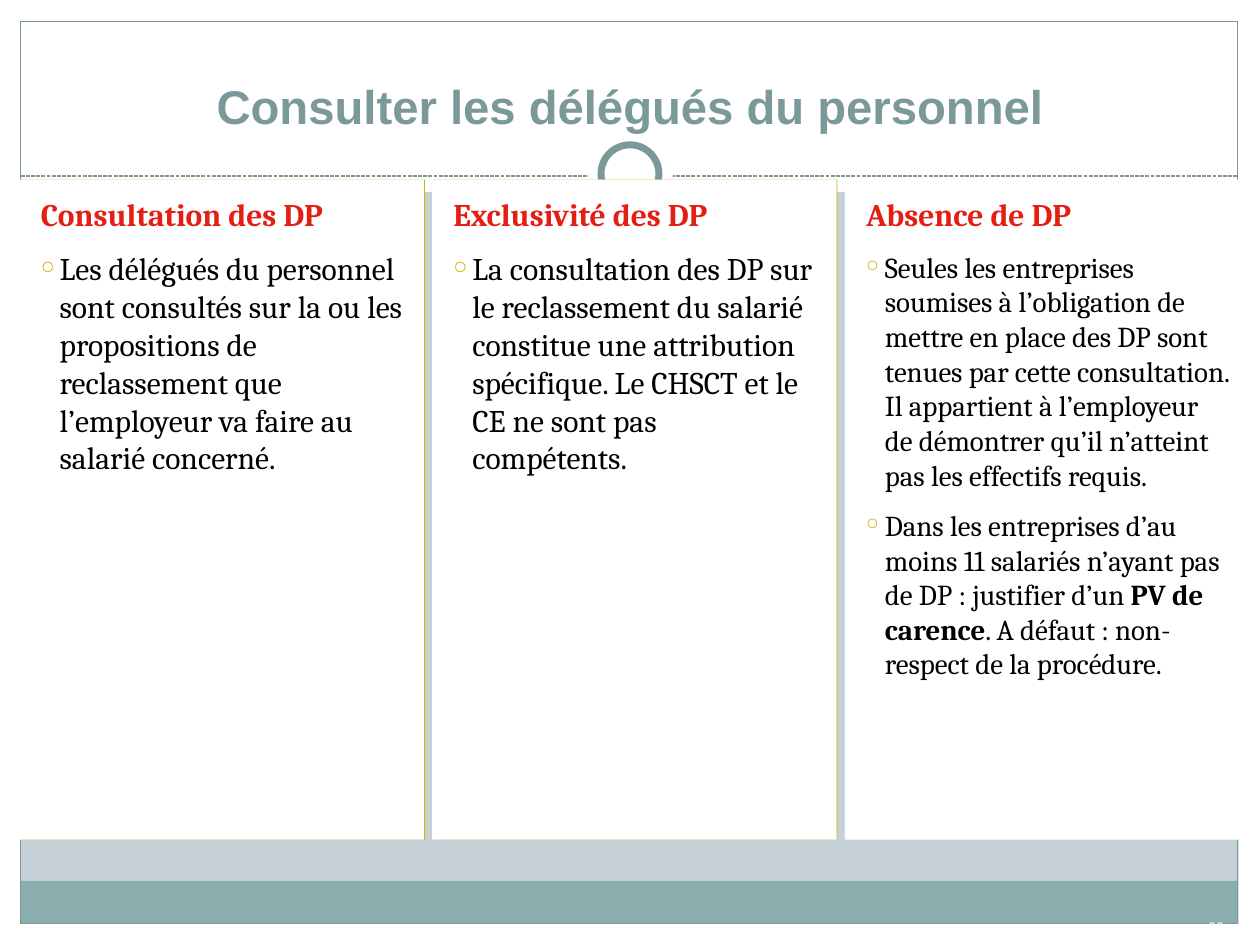
from dataclasses import dataclass
from typing import NamedTuple

from lxml.etree import SubElement
from pptx import Presentation
from pptx.dml.color import RGBColor
from pptx.enum.dml import MSO_LINE
from pptx.enum.shapes import MSO_CONNECTOR, MSO_SHAPE
from pptx.enum.text import MSO_ANCHOR, PP_ALIGN
from pptx.oxml.ns import qn
from pptx.util import Emu, Inches, Pt

SLIDE_W, SLIDE_H = Inches(10), Inches(7.5)
WHITE, BLACK, SAGE, MIST, TEAL = "FFFFFF", "000000", "7C999A", "C5D1D7", "8CADAE"
RED, GOLD = "E41E13", "CCB400"
COLUMN_LEFT, COLUMN_PITCH = 1.55, 32.75


class Box(NamedTuple):
    """Left, top, width and height in percent of the slide's size."""
    left: float
    top: float
    width: float
    height: float

    def emu(self) -> list[Emu]:
        sides = (SLIDE_W, SLIDE_H, SLIDE_W, SLIDE_H)
        return [Emu(round(side * share / 100)) for side, share in zip(sides, self)]


class Span(NamedTuple):
    text: str
    bold: bool = False


@dataclass
class Column:
    heading: str
    points: list[list[Span]]
    size: float = 18
    width: float = 32.1
    right_inset: float = 0.16
    edge: bool = True


COLUMNS = [
    Column("Consultation des DP", [[Span(
        "Les délégués du personnel sont consultés sur la ou les propositions de "
        "reclassement que l’employeur va faire au salarié concerné.")]]),
    Column("Exclusivité des DP", [[Span(
        "La consultation des DP sur le reclassement du salarié constitue une attribution "
        "spécifique. Le CHSCT et le CE ne sont pas compétents.")]]),
    Column("Absence de DP", [
        [Span("Seules les entreprises soumises à l’obligation de mettre en place des DP "
              "sont tenues par cette consultation. Il appartient à l’employeur de "
              "démontrer qu’il n’atteint pas les effectifs requis.")],
        [Span("Dans les entreprises d’au moins 11 salariés n’ayant pas de DP : "
              "justifier d’un "),
         Span("PV de carence", bold=True),
         Span(". A défaut : non-respect de la procédure.")],
    ], size=16.5, width=31.5, right_inset=0.1, edge=False),
]


def rgb(value: str) -> RGBColor:
    return RGBColor.from_string(value)


def draw_shape(slide, box: Box, fill: str | None = None, line: str | None = None,
               weight: float = 0.75, kind=MSO_SHAPE.RECTANGLE):
    shape = slide.shapes.add_shape(kind, *box.emu())
    shape.shadow.inherit = False
    if fill:
        shape.fill.solid()
        shape.fill.fore_color.rgb = rgb(fill)
    else:
        shape.fill.background()
    if line:
        shape.line.color.rgb = rgb(line)
        shape.line.width = Pt(weight)
    else:
        shape.line.fill.background()
    return shape


def set_frame(frame, insets: tuple[float, ...], anchor) -> None:
    frame.word_wrap = True
    frame.vertical_anchor = anchor
    (frame.margin_left, frame.margin_top,
     frame.margin_right, frame.margin_bottom) = map(Inches, insets)


def write(paragraph, text: str, *, size: float, color: str, font: str = "Cambria",
          bold: bool = False, align=PP_ALIGN.LEFT) -> None:
    paragraph.alignment = align
    run = paragraph.add_run()
    run.text = text
    run.font.name = font
    run.font.size = Pt(size)
    run.font.bold = bold
    run.font.color.rgb = rgb(color)


def set_spacing(paragraph, lines: float, before: float, margin: float,
                hanging: float = 0) -> None:
    paragraph.line_spacing = lines
    paragraph.space_before = Pt(before)
    properties = paragraph._p.get_or_add_pPr()
    properties.set("marL", str(Inches(margin)))
    properties.set("indent", str(-Inches(hanging)))


def add_bullet(paragraph) -> None:
    properties = paragraph._p.get_or_add_pPr()
    SubElement(SubElement(properties, qn("a:buClr")), qn("a:srgbClr"), val=GOLD)
    SubElement(properties, qn("a:buSzPct"), val="56000")
    SubElement(properties, qn("a:buChar"), char="○")


def add_edge_shadow(shape) -> None:
    """Give the shape a hard, half-point shadow on its right side."""
    effects = shape._element.spPr.find(qn("a:effectLst"))
    shadow = SubElement(effects, qn("a:outerShdw"), blurRad="0", dist=str(Pt(0.5)),
                        dir="0", algn="ctr", rotWithShape="0")
    SubElement(shadow, qn("a:srgbClr"), val=GOLD)


def draw_text_box(slide, box: Box, text: str, inset: float, anchor, **style) -> None:
    frame = slide.shapes.add_textbox(*box.emu()).text_frame
    set_frame(frame, (inset,) * 4, anchor)
    write(frame.paragraphs[0], text, font="Arial", align=PP_ALIGN.CENTER, **style)


def draw_dashed_rule(slide, left: float, right: float, top: float) -> None:
    x, y, width, _ = Box(left, top, right - left, 0).emu()
    rule = slide.shapes.add_connector(MSO_CONNECTOR.STRAIGHT, x, y, x + width, y)
    rule.line.color.rgb = rgb(SAGE)
    rule.line.width = Pt(0.75)
    rule.line.dash_style = MSO_LINE.SQUARE_DOT
    SubElement(rule._element.spPr, qn("a:effectLst"))


def draw_background(slide) -> None:
    slide.background.fill.solid()
    slide.background.fill.fore_color.rgb = rgb(MIST)
    for border in (Box(0, 97.73, 100, 2.27), Box(0, 0, 100, 20.3),
                   Box(0, 0, 1.67, 100), Box(98.3, 0, 1.7, 100)):
        draw_shape(slide, border, fill=WHITE)
    draw_shape(slide, Box(1.63, 93.2, 96.6, 4.53), fill=TEAL)
    draw_shape(slide, Box(1.65, 2.27, 96.6, 95.46), line=SAGE)
    draw_dashed_rule(slide, 1.65, 98.25, 18.62)
    draw_shape(slide, Box(46.7, 14, 6.7, 8.93), fill=WHITE, kind=MSO_SHAPE.OVAL)
    draw_shape(slide, Box(47.7, 15.33, 4.6, 6.13), fill=WHITE, line=SAGE, weight=4,
               kind=MSO_SHAPE.OVAL)


def draw_column(slide, index: int, column: Column) -> None:
    box = Box(COLUMN_LEFT + index * COLUMN_PITCH, 19, column.width, 69.87)
    panel = draw_shape(slide, box, fill=WHITE)
    if column.edge:
        add_edge_shadow(panel)
    frame = panel.text_frame
    set_frame(frame, (0.1, 0.16, column.right_inset, 0.16), MSO_ANCHOR.TOP)
    heading = frame.paragraphs[0]
    set_spacing(heading, lines=0.9, before=18, margin=0.07)
    write(heading, column.heading, size=18, color=RED, bold=True)
    for point in column.points:
        paragraph = frame.add_paragraph()
        set_spacing(paragraph, lines=1, before=9, margin=0.22, hanging=0.15)
        add_bullet(paragraph)
        for span in point:
            write(paragraph, span.text, size=column.size, color=BLACK, bold=span.bold)


def main() -> None:
    presentation = Presentation()
    presentation.slide_width, presentation.slide_height = SLIDE_W, SLIDE_H
    slide = presentation.slides.add_slide(presentation.slide_layouts[6])
    draw_background(slide)
    draw_text_box(slide, Box(6.9, 4.35, 86.2, 10.53), "Consulter les délégués du personnel",
                  0.05, MSO_ANCHOR.BOTTOM, size=27, color=SAGE, bold=True)
    for index, column in enumerate(COLUMNS):
        draw_column(slide, index, column)
    draw_text_box(slide, Box(93.9, 96.13, 5.2, 3.87), "66", 0.05, MSO_ANCHOR.MIDDLE,
                  size=7.9, color=WHITE)
    presentation.save("out.pptx")


if __name__ == "__main__":
    main()
